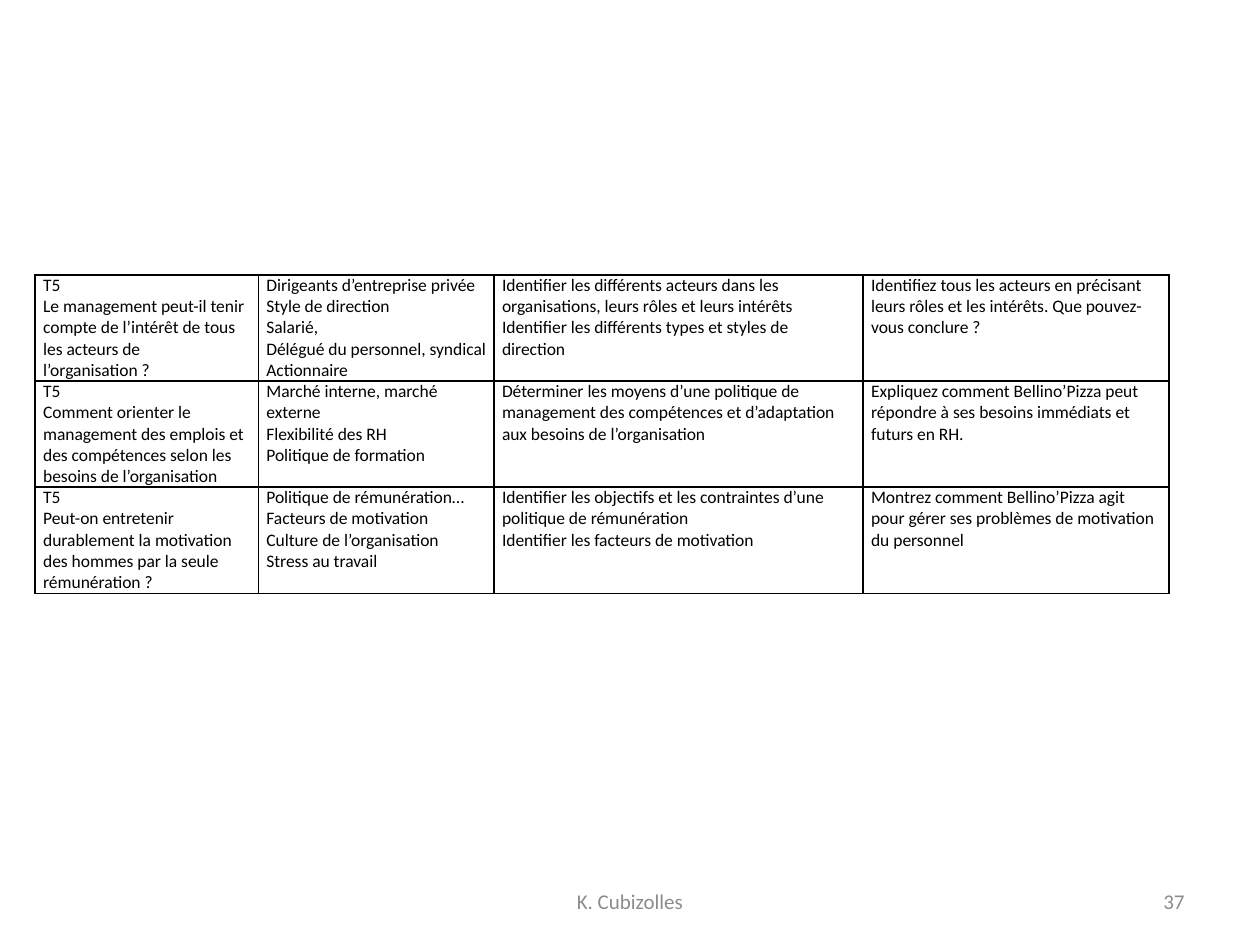
"""Build a slide with a table of management themes and a footer."""
from dataclasses import dataclass

import pptx
import pptx.dml.color
import pptx.enum.text
import pptx.oxml
import pptx.oxml.ns
import pptx.util
from pptx.util import Cm

BLACK = pptx.dml.color.RGBColor(0x00, 0x00, 0x00)
WHITE = pptx.dml.color.RGBColor(0xFF, 0xFF, 0xFF)
GREY = pptx.dml.color.RGBColor(0x8C, 0x8C, 0x8C)
FONT = "Calibri"
ALIGN = pptx.enum.text.PP_ALIGN
COLUMN_WIDTHS = (4.5, 4.75, 7.44, 6.17)
ROW_HEIGHT = 2.14


@dataclass
class Theme:
    question: str
    notions: list[str]
    skills: list[str]
    task: str

    def cells(self) -> list[list[str]]:
        return [["T5", self.question], self.notions, self.skills, [self.task]]


@dataclass
class FooterItem:
    text: str
    left: float
    width: float
    align: ALIGN


THEMES = [
    Theme(
        "Le management peut-il tenir compte de l’intérêt de tous les acteurs de l’organisation ?",
        ["Dirigeants d’entreprise privée", "Style de direction", "Salarié,",
         "Délégué du personnel, syndical", "Actionnaire"],
        ["Identifier les différents acteurs dans les organisations, leurs rôles et leurs intérêts",
         "Identifier les différents types et styles de direction"],
        "Identifiez tous les acteurs en précisant leurs rôles et les intérêts. "
        "Que pouvez-vous conclure ?",
    ),
    Theme(
        "Comment orienter le management des emplois et des compétences "
        "selon les besoins de l’organisation",
        ["Marché interne, marché externe", "Flexibilité des RH", "Politique de formation"],
        ["Déterminer les moyens d’une politique de management des compétences "
         "et d’adaptation aux besoins de l’organisation"],
        "Expliquez comment Bellino’Pizza peut répondre à ses besoins immédiats et futurs en RH.",
    ),
    Theme(
        "Peut-on entretenir durablement la motivation des hommes par la seule rémunération ?",
        ["Politique de rémunération…", "Facteurs de motivation",
         "Culture de l’organisation", "Stress au travail"],
        ["Identifier les objectifs et les contraintes d’une politique de rémunération",
         "Identifier les facteurs de motivation"],
        "Montrez comment Bellino’Pizza agit pour gérer ses problèmes de motivation du personnel",
    ),
]
FOOTER = [
    FooterItem("K. Cubizolles", 8.68, 8.04, ALIGN.CENTER),
    FooterItem("37", 18.2, 5.93, ALIGN.RIGHT),
]


def write(tf, lines: list[str], size: int, color, align: ALIGN) -> None:
    for i, line in enumerate(lines):
        p = tf.add_paragraph() if i else tf.paragraphs[0]
        p.alignment = align
        r = p.add_run()
        r.text = line
        r.font.name = FONT
        r.font.size = pptx.util.Pt(size)
        r.font.color.rgb = color


def add_borders(cell) -> None:
    tc_pr = cell._tc.get_or_add_tcPr()
    for side in ("lnL", "lnR", "lnT", "lnB"):
        tc_pr.append(pptx.oxml.parse_xml(
            f'<a:{side} {pptx.oxml.ns.nsdecls("a")} w="12700"><a:solidFill>'
            f'<a:srgbClr val="{BLACK}"/></a:solidFill></a:{side}>'))


def fill_cell(cell, lines: list[str]) -> None:
    cell.margin_left = cell.margin_right = Cm(0.16)
    cell.margin_top = cell.margin_bottom = 0
    add_borders(cell)
    cell.fill.solid()
    cell.fill.fore_color.rgb = WHITE
    write(cell.text_frame, lines, 10, BLACK, ALIGN.LEFT)


def add_themes(s, themes: list[Theme]) -> None:
    table = s.shapes.add_table(
        len(themes), len(COLUMN_WIDTHS), Cm(0.71), Cm(5.54),
        Cm(sum(COLUMN_WIDTHS)), Cm(ROW_HEIGHT * len(themes))).table
    table.first_row = table.horz_banding = False
    for column, width in zip(table.columns, COLUMN_WIDTHS):
        column.width = Cm(width)
    for row, theme in zip(table.rows, themes):
        row.height = Cm(ROW_HEIGHT)
        for cell, lines in zip(row.cells, theme.cells()):
            fill_cell(cell, lines)


def add_footer_item(s, item: FooterItem) -> None:
    sp = s.shapes.add_textbox(Cm(item.left), Cm(17.65), Cm(item.width), Cm(1.02))
    tf = sp.text_frame
    tf.word_wrap = True
    tf.vertical_anchor = pptx.enum.text.MSO_ANCHOR.MIDDLE
    write(tf, [item.text], 12, GREY, item.align)


def main() -> None:
    prs = pptx.Presentation()
    prs.slide_width, prs.slide_height = Cm(25.4), Cm(19.05)
    s = prs.slides.add_slide(prs.slide_layouts[6])
    for item in FOOTER:
        add_footer_item(s, item)
    add_themes(s, THEMES)
    prs.save("out.pptx")


if __name__ == "__main__":
    main()
